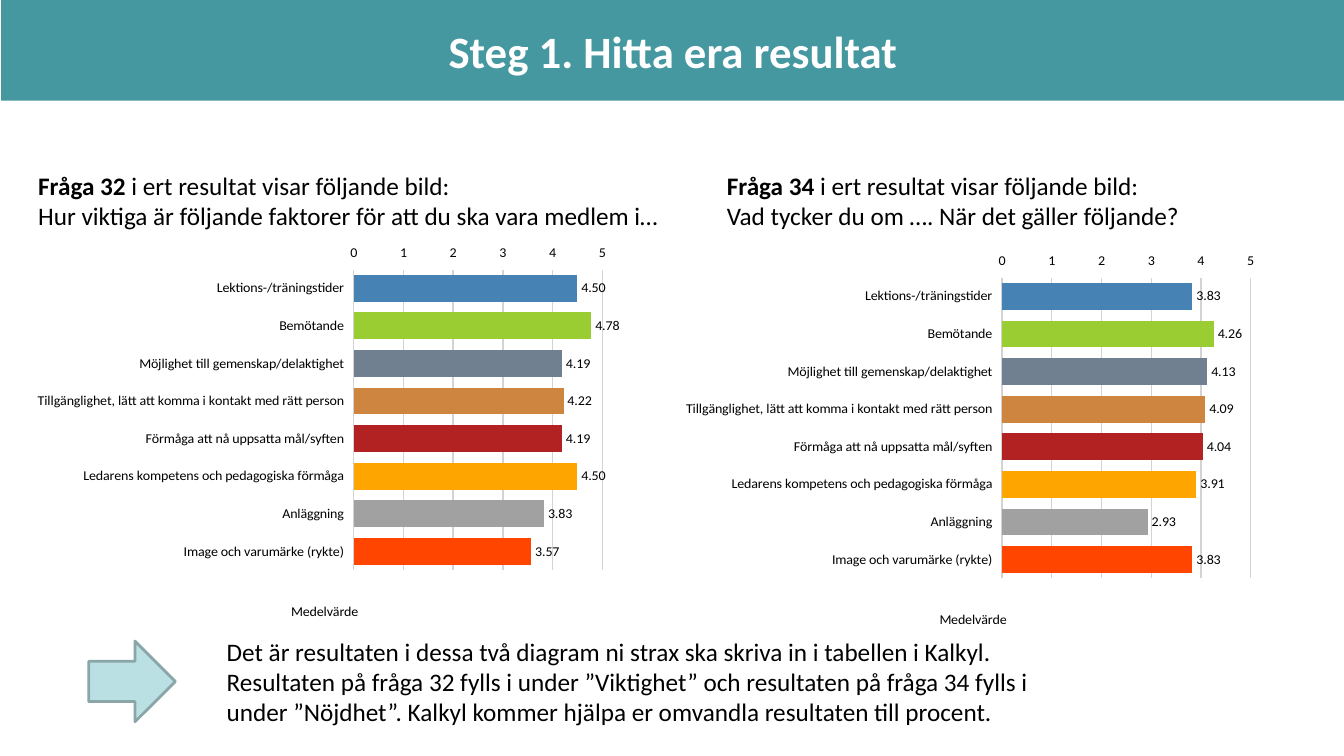
import pptx
import pptx.chart.data
import pptx.dml.color
import pptx.enum.chart
import pptx.enum.shapes
import pptx.enum.text
import pptx.oxml
import pptx.oxml.ns
import pptx.util

RGBColor = pptx.dml.color.RGBColor
TEAL = RGBColor(0x45, 0x97, 0xA0)
PALE_TEAL = RGBColor(0xBB, 0xE0, 0xE3)
GREY_TEAL = RGBColor(0x8A, 0xA6, 0xA8)
WHITE = RGBColor(0xFF, 0xFF, 0xFF)
BLACK = RGBColor(0x00, 0x00, 0x00)
GRID_GREY = RGBColor(0xD3, 0xD3, 0xD3)
STEEL_BLUE = RGBColor(0x46, 0x82, 0xB4)

# Each factor: name, bar colour, importance (question 32), satisfaction (question 34)
FACTORS = [
    ("Lektions-/träningstider", STEEL_BLUE, 4.50, 3.83),
    ("Bemötande", RGBColor(0x9A, 0xCD, 0x32), 4.78, 4.26),
    ("Möjlighet till gemenskap/delaktighet", RGBColor(0x70, 0x80, 0x90), 4.19, 4.13),
    ("Tillgänglighet, lätt att komma i kontakt med rätt person",
     RGBColor(0xCD, 0x85, 0x3F), 4.22, 4.09),
    ("Förmåga att nå uppsatta mål/syften", RGBColor(0xB2, 0x22, 0x22), 4.19, 4.04),
    ("Ledarens kompetens och pedagogiska förmåga", RGBColor(0xFF, 0xA5, 0x00), 4.50, 3.91),
    ("Anläggning", RGBColor(0xA1, 0xA1, 0xA1), 3.83, 2.93),
    ("Image och varumärke (rykte)", RGBColor(0xFF, 0x45, 0x00), 3.57, 3.83),
]
NAMES, COLORS, IMPORTANCE, SATISFACTION = zip(*FACTORS)


def set_layout(parent, **settings):
    """Give a chart part a manual layout, in shares of the chart's size."""
    qn = pptx.oxml.ns.qn
    layout = parent.find(qn("c:layout"))
    if layout is None:
        layout = parent.makeelement(qn("c:layout"), {})
        parent.insert(0, layout)
    manual = pptx.oxml.parse_xml(
        "<c:manualLayout %s/>" % pptx.oxml.ns.nsdecls("c"))
    for name, value in settings.items():
        manual.append(manual.makeelement(qn("c:" + name), {"val": str(value)}))
    layout.append(manual)


class SlideBuilder:
    """Holds style and slide; lengths are columns and rows of a 100 by 100 grid."""

    font = "Calibri"
    body_size = 18
    chart_size = 10

    def __init__(self, prs):
        self.s = prs.slides.add_slide(prs.slide_layouts[6])
        self.column = prs.slide_width / 100
        self.row = prs.slide_height / 100

    def box(self, left, top, width, height):
        return (round(left * self.column), round(top * self.row),
                round(width * self.column), round(height * self.row))

    def style_font(self, font, size, color=BLACK, bold=False):
        font.name = self.font
        font.size = pptx.util.Pt(size)
        font.color.rgb = color
        font.bold = bold

    def run(self, p, text, size, color=BLACK, bold=False):
        r = p.add_run()
        r.text = text
        self.style_font(r.font, size, color, bold)

    def shape(self, kind, at, fill, line=None):
        sp = self.s.shapes.add_shape(kind, *self.box(*at))
        sp.shadow.inherit = False
        sp.fill.solid()
        sp.fill.fore_color.rgb = fill
        if line is None:
            sp.line.fill.background()
        else:
            sp.line.color.rgb = line
            sp.line.width = pptx.util.Pt(2)
        return sp

    def banner(self, text, at):
        sp = self.shape(pptx.enum.shapes.MSO_SHAPE.RECTANGLE, at, TEAL)
        tf = sp.text_frame
        tf.vertical_anchor = pptx.enum.text.MSO_ANCHOR.MIDDLE
        p = tf.paragraphs[0]
        p.alignment = pptx.enum.text.PP_ALIGN.CENTER
        self.run(p, text, 32, WHITE, bold=True)

    def text(self, paragraphs, at):
        """Add a text box; each paragraph is a list of (text, bold) runs."""
        tf = self.s.shapes.add_textbox(*self.box(*at)).text_frame
        tf.word_wrap = True
        tf.auto_size = pptx.enum.text.MSO_AUTO_SIZE.SHAPE_TO_FIT_TEXT
        for i, runs in enumerate(paragraphs):
            p = tf.add_paragraph() if i else tf.paragraphs[0]
            for text, bold in runs:
                self.run(p, text, self.body_size, bold=bold)

    def question(self, number, wording, at):
        self.text([[(f"Fråga {number} ", True),
                    ("i ert resultat visar följande bild:", False)],
                   [(wording, False)]], at)

    def bar_chart(self, values, at):
        enum = pptx.enum.chart
        data = pptx.chart.data.CategoryChartData()
        data.categories = NAMES
        data.add_series("Series 1", values)
        chart = self.s.shapes.add_chart(
            enum.XL_CHART_TYPE.BAR_CLUSTERED, *self.box(*at), data).chart
        chart.has_legend = False
        chart.has_title = False
        self.style_font(chart.font, self.body_size)
        set_layout(chart.element.chart.plotArea, layoutTarget="inner",
                   xMode="edge", yMode="edge", x=0.55, y=0.02, w=0.42, h=0.8)
        self.style_bars(chart.plots[0])

        for axis in (chart.category_axis, chart.value_axis):
            axis.format.line.fill.background()
            axis.major_tick_mark = enum.XL_TICK_MARK.OUTSIDE
            self.style_font(axis.tick_labels.font, self.chart_size)
        chart.category_axis.reverse_order = True
        chart.category_axis.crosses = enum.XL_AXIS_CROSSES.MAXIMUM
        self.style_scale(chart.value_axis)

    def style_bars(self, plot):
        plot.gap_width = 40
        plot.vary_by_categories = False
        series = plot.series[0]
        series.format.fill.solid()
        series.format.fill.fore_color.rgb = STEEL_BLUE
        for i, color in enumerate(COLORS):
            fill = series.points[i].format.fill
            fill.solid()
            fill.fore_color.rgb = color
        labels = series.data_labels
        labels.show_value = True
        labels.number_format = "0.00"
        labels.number_format_is_linked = False
        labels.position = pptx.enum.chart.XL_LABEL_POSITION.OUTSIDE_END
        self.style_font(labels.font, self.chart_size)

    def style_scale(self, axis):
        axis.minimum_scale = 0
        axis.maximum_scale = 5
        axis.major_unit = 1
        axis.tick_labels.number_format = "General"
        axis.tick_labels.number_format_is_linked = False
        axis.has_major_gridlines = True
        axis.major_gridlines.format.line.color.rgb = GRID_GREY
        axis.major_gridlines.format.line.width = pptx.util.Pt(1)
        title = axis.axis_title
        set_layout(title.element, xMode="edge", yMode="edge", x=0.44, y=0.9)
        self.run(title.text_frame.paragraphs[0], "Medelvärde", self.chart_size)


def main():
    prs = pptx.Presentation()
    prs.slide_width = pptx.util.Inches(13.33)
    prs.slide_height = pptx.util.Inches(7.5)

    slide = SlideBuilder(prs)
    slide.banner("Steg 1. Hitta era resultat", (0.08, 0, 100, 13.33))
    slide.question(32, "Hur viktiga är följande faktorer för att du ska vara medlem i…",
                   (2.1, 21.87, 47.86, 9.47))
    slide.bar_chart(IMPORTANCE, (2.1, 32.4, 44.04, 52))
    slide.shape(pptx.enum.shapes.MSO_SHAPE.RIGHT_ARROW, (6.6, 84.8, 6.45, 10.67),
                PALE_TEAL, GREY_TEAL)
    slide.text([
        [("Det är resultaten i dessa två diagram ni strax ska skriva in i "
          "tabellen i Kalkyl.", False)],
        [("Resultaten på fråga 32 fylls i under ”Viktighet” och resultaten på "
          "fråga 34 fylls i under ”Nöjdhet”. Kalkyl kommer hjälpa er omvandla "
          "resultaten till procent.", False)],
    ], (16.13, 83.47, 63.69, 13.47))
    slide.bar_chart(SATISFACTION, (50.34, 33.47, 44.04, 52))
    slide.question(34, "Vad tycker du om …. När det gäller följande?",
                   (53.34, 21.87, 44.56, 9.47))
    prs.save("out.pptx")


if __name__ == "__main__":
    main()
